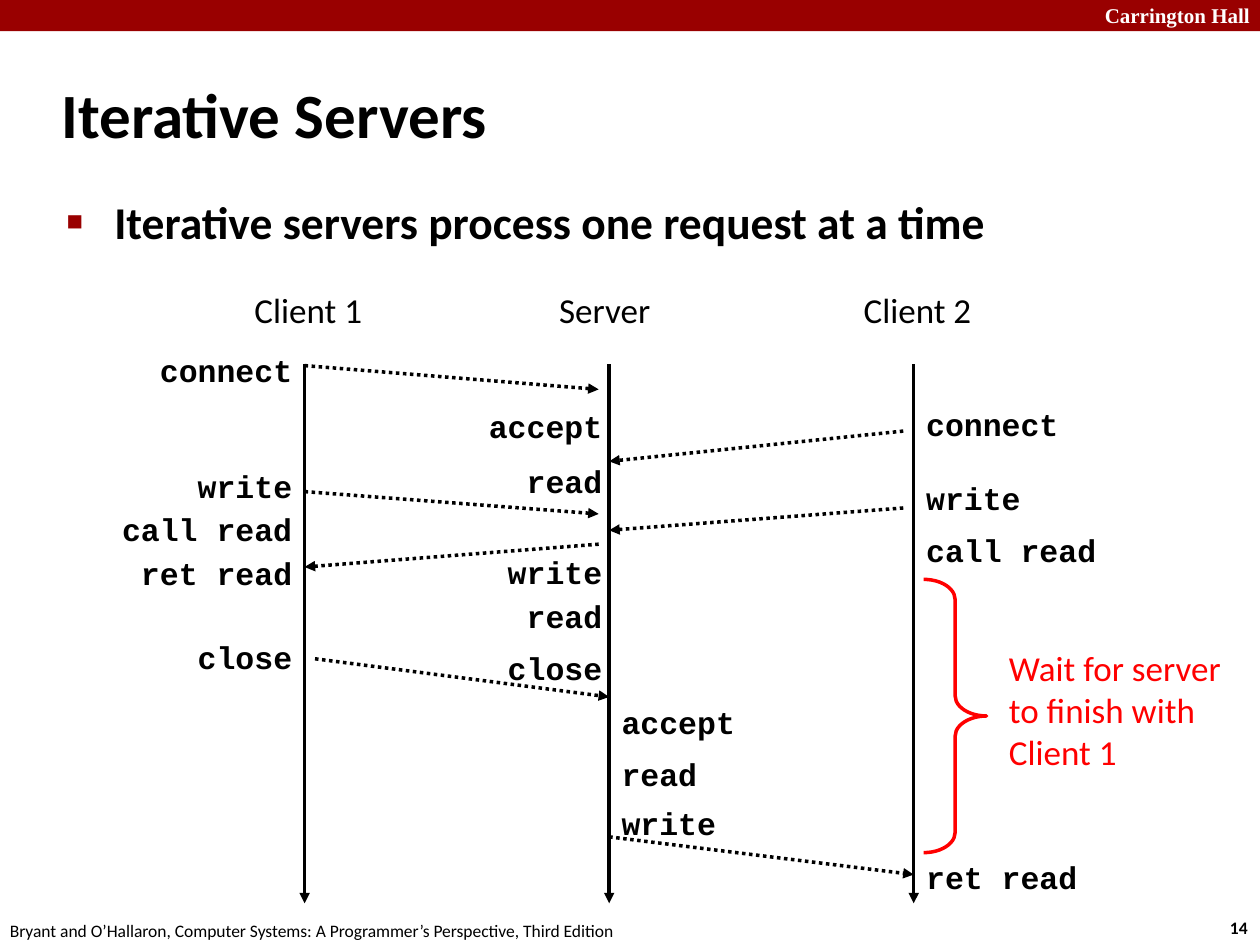
from lxml import etree
from pptx import Presentation
from pptx.dml.color import RGBColor
from pptx.enum import dml, shapes, text
from pptx.oxml.ns import qn
from pptx.util import Cm, Pt

INK = {"black": "000000", "white": "FFFFFF", "dark": "990000", "red": "FF0000"}
LEFT, RIGHT = text.PP_ALIGN.LEFT, text.PP_ALIGN.RIGHT
MONO = "Courier New"


class Deck:
    """Holds the style and the current slide."""

    def __init__(self):
        self.prs = Presentation()
        self.prs.slide_width, self.prs.slide_height = Cm(25.4), Cm(19.05)
        self.slide = self.prs.slides.add_slide(self.prs.slide_layouts[1])
        self.font = "Calibri"

    def color(self, name):
        return RGBColor.from_string(INK[name])

    def run(self, para, words, size, bold=False, ink="black", font=None):
        run = para.add_run()
        run.text = words
        run.font.size, run.font.bold = Pt(size), bold
        run.font.name = font or self.font
        run.font.color.rgb = self.color(ink)

    def place(self, shape, x, y, w, h):
        shape.left, shape.top, shape.width, shape.height = map(Cm, (x, y, w, h))

    def title(self, words, *box):
        shape = self.slide.shapes.title
        self.place(shape, *box)
        shape.text_frame.vertical_anchor = text.MSO_ANCHOR.MIDDLE
        para = shape.text_frame.paragraphs[0]
        para.alignment = LEFT
        self.run(para, words, 36, True)

    def body(self, words, *box):
        shape = self.slide.placeholders[1]
        self.place(shape, *box)
        para = shape.text_frame.paragraphs[0]
        self.run(para, words, 26, True)
        props = para._p.get_or_add_pPr()
        props.set("marL", str(Cm(0.96)))
        props.set("indent", str(-Cm(0.96)))
        tint = etree.SubElement(props, qn("a:buClr"))
        etree.SubElement(tint, qn("a:srgbClr"), val=INK["dark"])
        etree.SubElement(props, qn("a:buSzPct"), val="60000")
        etree.SubElement(props, qn("a:buFont"), typeface="Arial")
        etree.SubElement(props, qn("a:buChar"), char="■")

    def label(self, words, x, y, w, h, size, align=LEFT, **look):
        frame = self.slide.shapes.add_textbox(*map(Cm, (x, y, w, h))).text_frame
        frame.word_wrap = True
        para = frame.paragraphs[0]
        para.alignment = align
        self.run(para, words, size, **look)

    def bar(self, ink, *box):
        shape = self.slide.shapes.add_shape(
            shapes.MSO_SHAPE.RECTANGLE, *map(Cm, box))
        shape.shadow.inherit = False
        shape.fill.solid()
        shape.fill.fore_color.rgb = self.color(ink)
        shape.line.fill.background()

    def brace(self, ink, *box):
        shape = self.slide.shapes.add_shape(
            shapes.MSO_SHAPE.RIGHT_BRACE, *map(Cm, box))
        shape.shadow.inherit = False
        shape.adjustments[0] = 0.32
        shape.fill.background()
        shape.line.color.rgb = self.color(ink)
        shape.line.width = Pt(2)

    def arrow(self, x1, y1, x2, y2, dots=False):
        link = self.slide.shapes.add_connector(
            shapes.MSO_CONNECTOR.STRAIGHT, *map(Cm, (x1, y1, x2, y2)))
        link.line.color.rgb = self.color("black")
        link.line.width = Pt(2)
        if dots:
            link.line.dash_style = dml.MSO_LINE.ROUND_DOT
        etree.SubElement(link.line._get_or_add_ln(), qn("a:tailEnd"), type="triangle")
        etree.SubElement(link._element.spPr, qn("a:effectLst"))


def main():
    deck = Deck()

    # Header and footer
    deck.bar("dark", 0, 0, 25.4, 0.63)
    deck.label("Carrington Hall", 19.4, -0.08, 6.05, 0.76, 12, RIGHT,
               bold=True, ink="white", font="Times New Roman")
    deck.label("14", 24.3, 18.36, 1.1, 0.69, 10, RIGHT, bold=True)
    deck.label("Bryant and O’Hallaron, Computer Systems: A Programmer’s "
               "Perspective, Third Edition", -0.05, 18.42, 14, 0.69, 10)

    # Title and bullet
    deck.title("Iterative Servers", 0.99, 1.22, 21.08, 2.11)
    deck.body("Iterative servers process one request at a time",
              1.09, 3.78, 21.95, 13.82)

    # Time lines
    one, mid, two = axes = [6.14 * n for n in (1, 2, 3)]
    for x, name in zip(axes, ("Client 1", "Server", "Client 2")):
        deck.label(name, x - 1.26, 5.69, 3.5, 1.12, 20)
        deck.arrow(x, 7.34, x, 18.21)

    # Calls beside each line: edge, side, (name, top)
    calls = [
        (one, RIGHT, [("connect", 6.96), ("write", 9.3), ("call read", 10.16),
                      ("ret read", 11.05), ("close", 12.73)]),
        (mid + 0.11, RIGHT, [("accept", 8.08), ("read", 9.19), ("write", 11.02),
                             ("read", 11.91), ("close", 12.95)]),
        (mid, LEFT, [("accept", 14.05), ("read", 15.09), ("write", 16.08)]),
        (two, LEFT, [("connect", 8.05), ("write", 9.53), ("call read", 10.59),
                     ("ret read", 17.17)]),
    ]
    wide = 4.5
    for edge, side, items in calls:
        x = edge - wide if side == RIGHT else edge
        for name, y in items:
            deck.label(name, x, y, wide, 1.02, 18, side, bold=True, font=MONO)

    # Messages between the lines
    gap = 0.21
    for ends in [
        (one, 7.37, mid - gap, 7.85),
        (two - gap, 8.69, mid, 9.3),
        (one, 9.91, mid - gap, 10.36),
        (two - gap, 10.24, mid, 10.69),
        (mid - gap, 10.97, one, 11.43),
        (one + gap, 13.28, mid, 14.05),
        (mid, 16.87, two, 17.63),
    ]:
        deck.arrow(*ends, dots=True)

    # Waiting time
    deck.brace("red", 18.62, 11.68, 1.27, 5.51)
    deck.label("Wait for server to finish with Client 1",
               20.09, 12.9, 5.31, 2.82, 20, ink="red")

    deck.prs.save("out.pptx")


if __name__ == "__main__":
    main()
